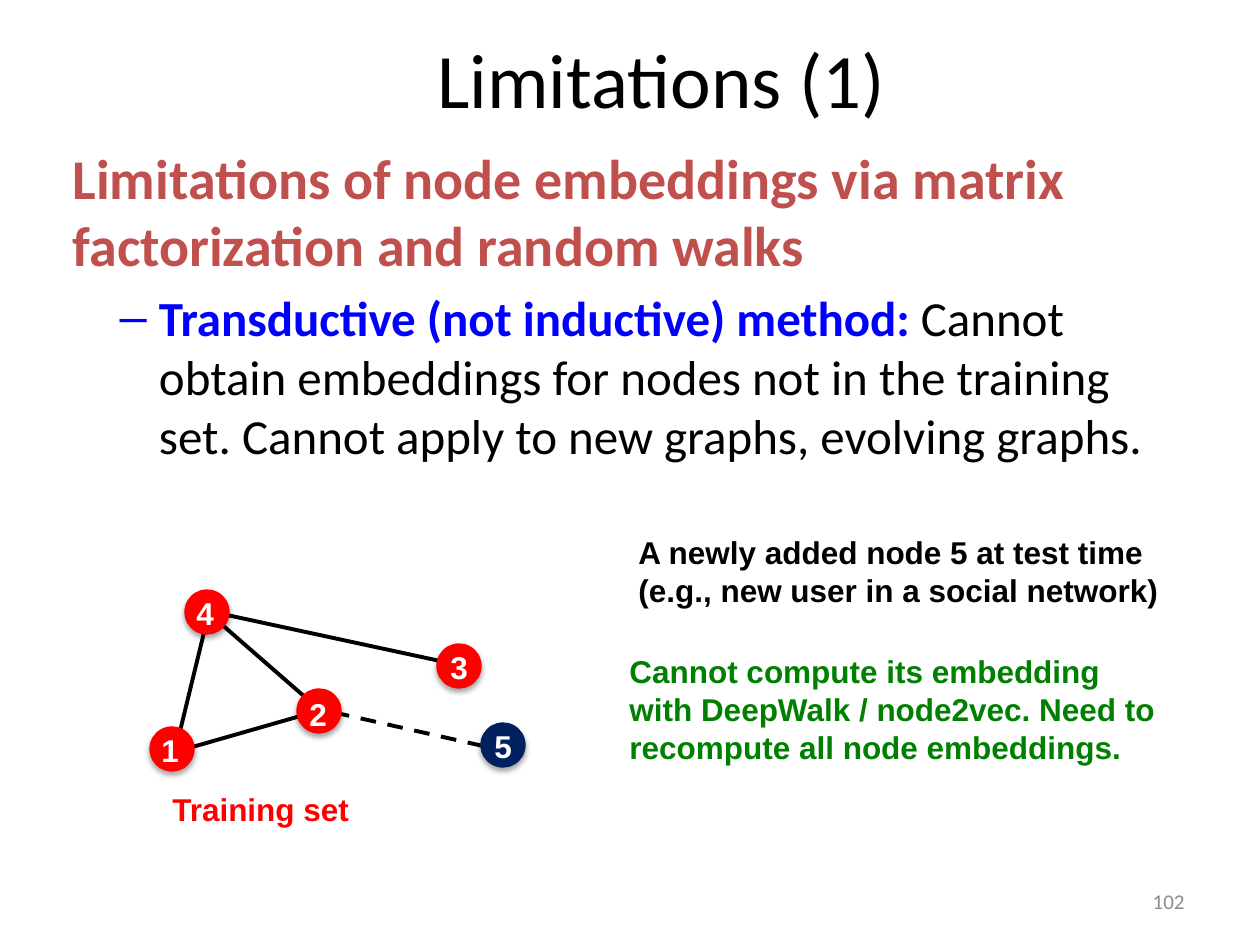
"""Build a slide on the limits of transductive node embeddings."""
from dataclasses import dataclass

from lxml import etree
from pptx import Presentation
from pptx.dml.color import RGBColor
from pptx.enum.dml import MSO_LINE
from pptx.enum.shapes import MSO_CONNECTOR, MSO_SHAPE
from pptx.enum.text import MSO_ANCHOR, PP_ALIGN
from pptx.oxml import parse_xml
from pptx.oxml.ns import nsdecls, qn
from pptx.util import Emu, Pt

DASH = MSO_LINE.DASH
LINE = MSO_CONNECTOR.STRAIGHT
OVAL = MSO_SHAPE.OVAL
MID = MSO_ANCHOR.MIDDLE
LEFT, MIDST, RIGHT = PP_ALIGN.LEFT, PP_ALIGN.CENTER, PP_ALIGN.RIGHT
SHADE = (
    f'<a:effectLst {nsdecls("a")}><a:outerShdw blurRad="39370" dist="22860" '
    'dir="5400000" rotWithShape="0"><a:srgbClr val="000000">'
    '<a:alpha val="35000"/></a:srgbClr></a:outerShdw></a:effectLst>'
)


@dataclass(frozen=True)
class Theme:
    """Colours, fonts and type sizes in points."""
    black: str = "000000"
    white: str = "FFFFFF"
    red: str = "FF0000"
    navy: str = "002060"
    blue: str = "0000FF"
    green: str = "008000"
    brick: str = "C0504D"
    grey: str = "8C8C8C"
    main: str = "Calibri"
    note: str = "Arial"
    title: int = 44
    head: int = 32
    body: int = 28
    label: int = 18
    foot: int = 12


@dataclass(frozen=True)
class Box:
    """A frame in px."""
    x: int
    y: int
    w: int
    h: int


@dataclass(frozen=True)
class Node:
    """A graph node with the shift of its label."""
    name: str
    x: int
    y: int
    fill: str
    dx: int = 0
    dy: int = -2


@dataclass(frozen=True)
class Edge:
    """A graph edge between two points."""
    x1: int
    y1: int
    x2: int
    y2: int
    dash: bool = False


@dataclass(frozen=True)
class Note:
    """A bold caption beside the graph."""
    text: str
    box: Box
    tint: str
    wrap: bool = False


THEME = Theme()
SIZE = 44
NODES = [
    Node("1", 150, 727, THEME.red, -1),
    Node("4", 185, 590, THEME.red, -1),
    Node("3", 437, 644, THEME.red, 1),
    Node("2", 297, 689, THEME.red, 0, 0),
    Node("5", 481, 723, THEME.navy, 1),
]
EDGES = [
    Edge(208, 616, 175, 752),
    Edge(212, 616, 321, 711),
    Edge(175, 752, 318, 711),
    Edge(454, 664, 213, 612),
    Edge(483, 746, 341, 714, True),
]
NOTES = [
    Note("Training set", Box(160, 784, 204, 50), THEME.red),
    Note("A newly added node 5 at test time\v"
         "(e.g., new user in a social network)",
         Box(626, 527, 559, 89), THEME.black),
    Note("Cannot compute its embedding\vwith DeepWalk / node2vec. "
         "Need to recompute all node embeddings.",
         Box(617, 646, 614, 127), THEME.green, True),
]


def px(num: int) -> Emu:
    """Turn px into EMU."""
    return Emu(round(num * 914400 / 126))


def tint(code: str) -> RGBColor:
    """Turn a hex code into a colour."""
    return RGBColor.from_string(code)


def place(shape, box: Box) -> None:
    """Move and size a shape."""
    shape.left, shape.top = px(box.x), px(box.y)
    shape.width, shape.height = px(box.w), px(box.h)


def style(run, size: int, code: str, face: str, bold: bool = False) -> None:
    """Format one run."""
    font = run.font
    font.size, font.name, font.bold = Pt(size), face, bold
    font.color.rgb = tint(code)


def add_text(slide, text: str, box: Box, size: int, code: str, face: str,
             bold: bool = True, wrap: bool = False, align=LEFT):
    """Add a text box and return its frame."""
    frame = slide.shapes.add_textbox(0, 0, 0, 0)
    place(frame, box)
    body = frame.text_frame
    body.word_wrap = wrap
    body.text = text
    para = body.paragraphs[0]
    para.alignment = align
    for run in para.runs:
        style(run, size, code, face, bold)
    return body


def add_edge(slide, edge: Edge) -> None:
    """Draw an edge."""
    ends = map(px, (edge.x1, edge.y1, edge.x2, edge.y2))
    link = slide.shapes.add_connector(LINE, *ends)
    link.line.color.rgb = tint(THEME.black)
    link.line.width = Pt(2.25)
    if edge.dash:
        link.line.dash_style = DASH
    etree.SubElement(link._element.spPr, qn("a:effectLst"))


def add_node(slide, node: Node) -> None:
    """Draw a node and its label."""
    disc = slide.shapes.add_shape(OVAL, 0, 0, 0, 0)
    place(disc, Box(node.x, node.y, SIZE, SIZE))
    disc.fill.solid()
    disc.fill.fore_color.rgb = tint(node.fill)
    disc.line.color.rgb = tint(node.fill)
    disc.line.width = Pt(0.75)
    disc._element.spPr.append(parse_xml(SHADE))
    box = Box(node.x + node.dx, node.y + node.dy, 43, 50)
    add_text(slide, node.name, box, THEME.label, THEME.white, THEME.note)


def fill_title(shape) -> None:
    """Set the title."""
    place(shape, Box(63, 10, 1197, 136))
    shape.text_frame.text = "Limitations (1)"
    para = shape.text_frame.paragraphs[0]
    para.alignment = MIDST
    style(para.runs[0], THEME.title, THEME.black, THEME.main)


def fill_body(shape) -> None:
    """Set the heading and its point."""
    place(shape, Box(44, 137, 1134, 624))
    frame = shape.text_frame
    frame.text = ("Limitations of node embeddings via matrix "
                  "factorization and random walks")
    head = frame.paragraphs[0]
    style(head.runs[0], THEME.head, THEME.brick, THEME.main, True)
    props = head._p.get_or_add_pPr()
    props.set("marL", str(px(16)))
    props.set("indent", "0")
    etree.SubElement(props, qn("a:buNone"))
    item = frame.add_paragraph()
    item.level = 1
    item.text = "Transductive (not inductive) method:"
    style(item.runs[0], THEME.body, THEME.blue, THEME.main, True)
    rest = item.add_run()
    rest.text = (" Cannot obtain embeddings for nodes not in the training "
                 "set. Cannot apply to new graphs, evolving graphs.")
    style(rest, THEME.body, THEME.black, THEME.main)


def main() -> None:
    """Build and save the slide."""
    deck = Presentation()
    deck.slide_width, deck.slide_height = px(1260), px(945)
    slide = deck.slides.add_slide(deck.slide_layouts[1])
    fill_title(slide.shapes.title)
    fill_body(slide.placeholders[1])
    foot = add_text(slide, "102", Box(903, 876, 294, 50), THEME.foot,
                    THEME.grey, THEME.main, False, True, RIGHT)
    foot.vertical_anchor = MID
    for edge in EDGES:
        add_edge(slide, edge)
    for node in NODES:
        add_node(slide, node)
    for note in NOTES:
        add_text(slide, note.text, note.box, THEME.label, note.tint,
                 THEME.note, wrap=note.wrap)
    deck.save("out.pptx")


if __name__ == "__main__":
    main()
